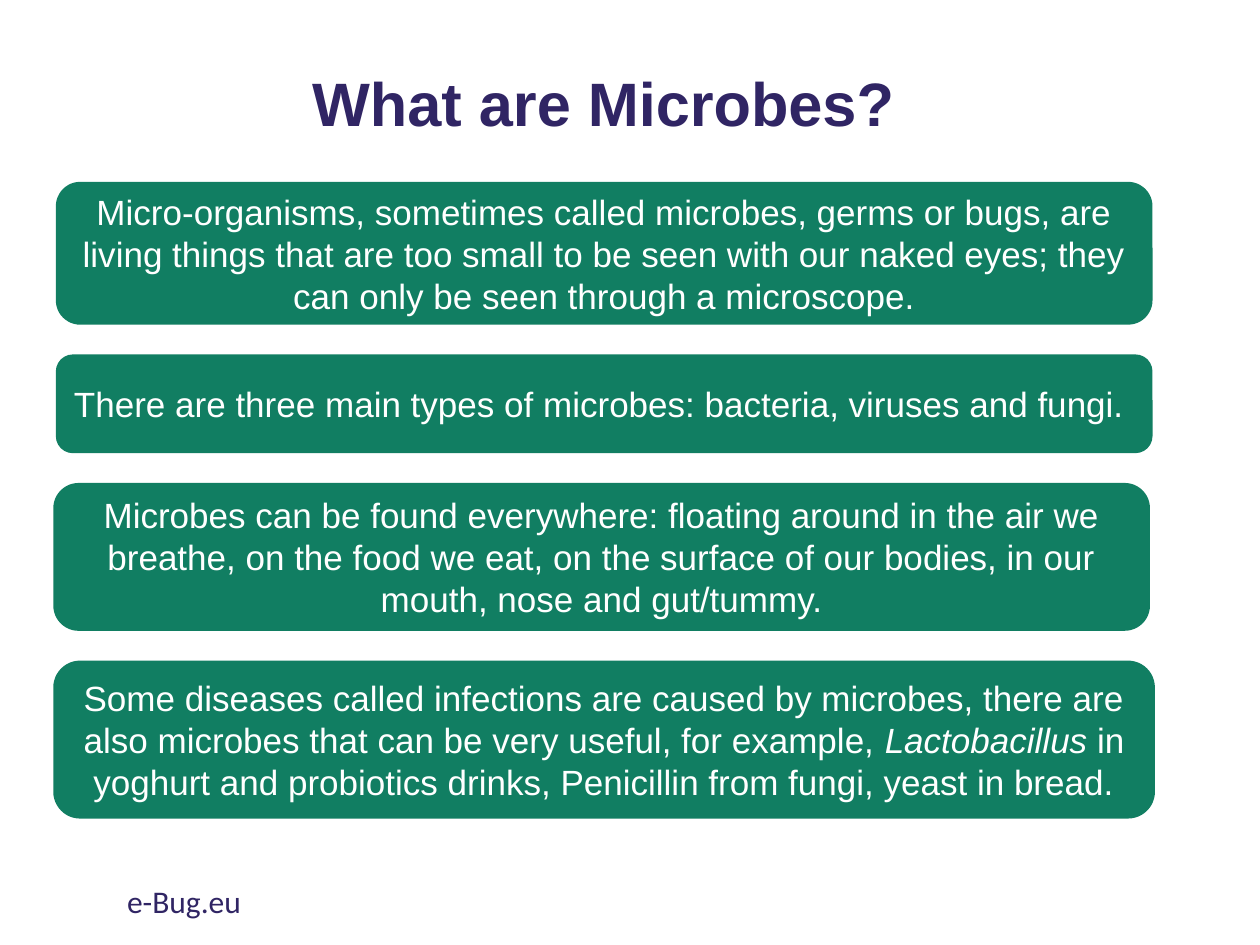
"""Build the slide that explains what microbes are."""
from dataclasses import dataclass

from pptx import Presentation
from pptx.dml.color import RGBColor
from pptx.enum.shapes import MSO_SHAPE
from pptx.enum.text import MSO_ANCHOR, PP_ALIGN
from pptx.util import Inches, Pt

ROUNDED = MSO_SHAPE.ROUNDED_RECTANGLE
MIDDLE, TOP = MSO_ANCHOR.MIDDLE, MSO_ANCHOR.TOP
CENTER, LEFT = PP_ALIGN.CENTER, PP_ALIGN.LEFT
COLUMNS, ROWS = 100, 75


@dataclass(frozen=True)
class Theme:
    """Colours, fonts and type sizes of the slide."""
    ink: RGBColor = RGBColor(0x30, 0x25, 0x64)
    panel: RGBColor = RGBColor(0x11, 0x7E, 0x62)
    panel_text: RGBColor = RGBColor(0xFF, 0xFF, 0xFF)
    main_font: str = "Arial"
    footer_font: str = "Calibri"
    title_size: int = 35
    fact_size: int = 20
    footer_size: int = 18


class FactSlide:
    """Draws titles, fact panels and footers on one slide."""

    def __init__(self, deck, theme):
        self.theme = theme
        self.slide = deck.slides.add_slide(deck.slide_layouts[6])
        self.column = deck.slide_width / COLUMNS
        self.row = deck.slide_height / ROWS

    def place(self, left, top, width, height):
        """Turn grid columns and rows into slide lengths."""
        return (round(left * self.column), round(top * self.row),
                round(width * self.column), round(height * self.row))

    def set_wording(self, holder, pieces, font, size, color, align, anchor):
        """Fill a shape with one paragraph whose odd pieces are italic."""
        frame = holder.text_frame
        frame.word_wrap = True
        frame.vertical_anchor = anchor
        paragraph = frame.paragraphs[0]
        paragraph.alignment = align
        for index, piece in enumerate(pieces):
            run = paragraph.add_run()
            run.text = piece
            run.font.name, run.font.size = font, Pt(size)
            run.font.color.rgb = color
            run.font.italic = index % 2 == 1
        return paragraph

    def title(self, wording, *area):
        """Add the bold centred heading."""
        theme = self.theme
        heading = self.slide.shapes.add_textbox(*self.place(*area))
        paragraph = self.set_wording(heading, [wording], theme.main_font,
                                     theme.title_size, theme.ink, CENTER, MIDDLE)
        paragraph.line_spacing = 0.9
        paragraph.runs[0].font.bold = True

    def fact(self, pieces, *area):
        """Add a rounded panel that states one fact."""
        theme = self.theme
        panel = self.slide.shapes.add_shape(ROUNDED, *self.place(*area))
        panel.shadow.inherit = False
        panel.fill.solid()
        panel.fill.fore_color.rgb = theme.panel
        panel.line.color.rgb = theme.panel
        panel.line.width = Pt(1)
        self.set_wording(panel, pieces, theme.main_font, theme.fact_size,
                         theme.panel_text, CENTER, MIDDLE)

    def footer(self, wording, *area):
        """Add the site address at the foot."""
        theme = self.theme
        address = self.slide.shapes.add_textbox(*self.place(*area))
        self.set_wording(address, [wording], theme.footer_font, theme.footer_size,
                         theme.ink, LEFT, TOP)


FACTS = [
    (4.5, 86.9, 11.2, [
        "Micro-organisms, sometimes called microbes, germs or bugs, are living things "
        "that are too small to be seen with our naked eyes; they can only be seen "
        "through a microscope."]),
    (4.5, 86.9, 7.7, [
        "There are three main types of microbes: bacteria, viruses and fungi. "]),
    (4.3, 86.9, 11.6, [
        "Microbes can be found everywhere: floating around in the air we breathe, on "
        "the food we eat, on the surface of our bodies, in our mouth, nose and "
        "gut/tummy."]),
    (4.3, 87.3, 12.4, [
        "Some diseases called infections are caused by microbes, there are also "
        "microbes that can be very useful, for example, ",
        "Lactobacillus",
        " in yoghurt and probiotics drinks, Penicillin from fungi, yeast in bread."]),
]
FIRST_FACT_TOP, FACT_GAP = 14.5, 2.5


def main():
    """Assemble and save the deck."""
    deck = Presentation()
    deck.slide_width, deck.slide_height = Inches(10), Inches(7.5)
    microbes = FactSlide(deck, Theme())
    microbes.title("What are Microbes?", 4.8, 1.2, 86.2, 14.5)
    microbes.footer("e-Bug.eu", 9.1, 69.5, 33.8, 4)
    top = FIRST_FACT_TOP
    for left, width, height, pieces in FACTS:
        microbes.fact(pieces, left, top, width, height)
        top += height + FACT_GAP
    deck.save("out.pptx")


if __name__ == "__main__":
    main()
